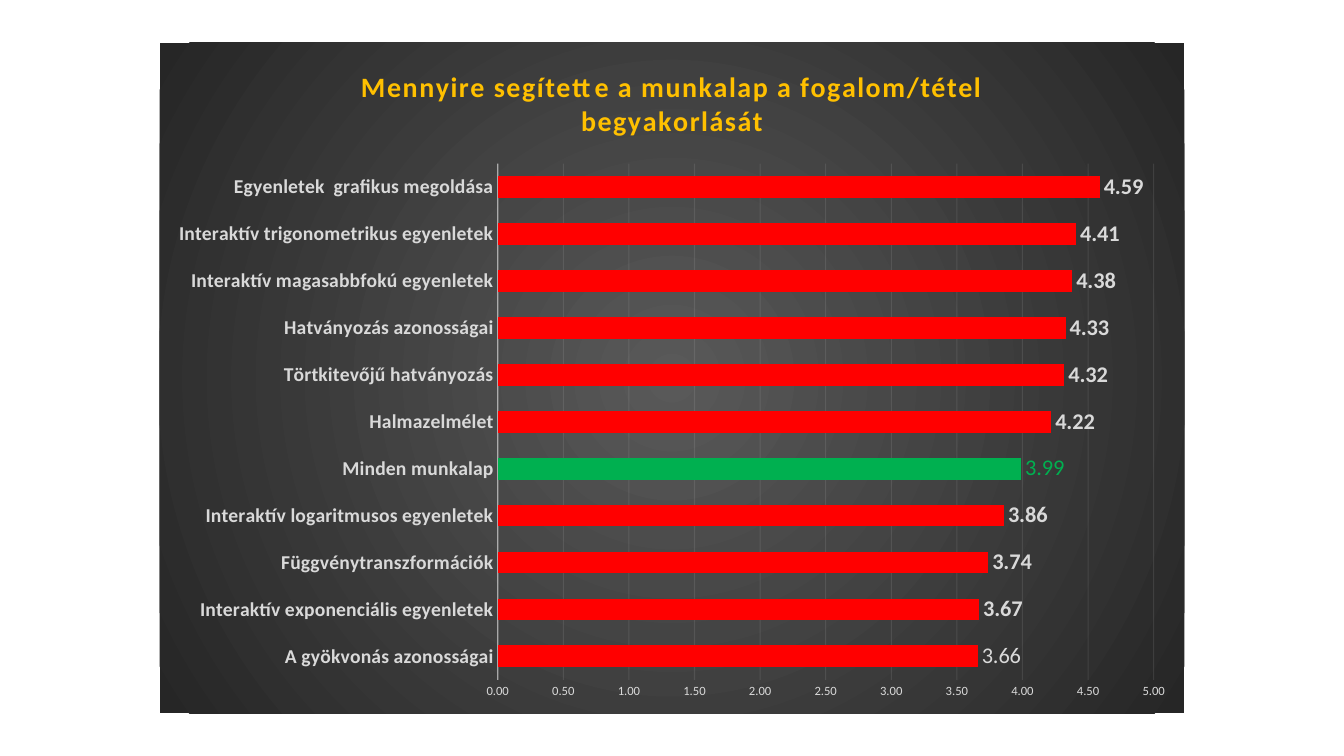
from lxml.etree import SubElement
from pptx import Presentation
from pptx.chart.data import CategoryChartData
from pptx.dml.color import RGBColor
from pptx.enum.chart import XL_CHART_TYPE, XL_LABEL_POSITION, XL_TICK_MARK
from pptx.oxml import parse_xml
from pptx.oxml.ns import nsdecls, qn
from pptx.util import Cm, Pt

COLORS = {
    "title": "FFC000",
    "text": "D9D9D9",
    "line": "F2F2F2",
    "bar": "FF0000",
    "average": "00B050",
    "center": "595959",
    "edge": "262626",
}
FONT = "Calibri"
TITLE = "Mennyire segítette a munkalap a fogalom/tétel begyakorlását"
RATINGS = {
    "A gyökvonás azonosságai": 3.66,
    "Interaktív exponenciális egyenletek": 3.67,
    "Függvénytranszformációk": 3.74,
    "Interaktív logaritmusos egyenletek": 3.86,
    "Minden munkalap": 3.99,
    "Halmazelmélet": 4.22,
    "Törtkitevőjű hatványozás": 4.32,
    "Hatványozás azonosságai": 4.33,
    "Interaktív magasabbfokú egyenletek": 4.38,
    "Interaktív trigonometrikus egyenletek": 4.41,
    "Egyenletek  grafikus megoldása": 4.59,
}
AVERAGE = list(RATINGS).index("Minden munkalap")
PLOT_LAYOUT = {"x": 0.33, "y": 0.18, "w": 0.64, "h": 0.77}


def rgb(name):
    return RGBColor.from_string(COLORS[name])


def set_font(font, size, color="text", bold=False):
    font.name = FONT
    font.size = Pt(size)
    font.bold = bold
    font.color.rgb = rgb(color)


def set_line(line, width, holder, opacity):
    """Style a line; holder is the chart element that owns it."""
    line.width = Pt(width)
    line.color.rgb = rgb("line")
    color = holder.find(qn("c:spPr")).find(".//" + qn("a:srgbClr"))
    SubElement(color, qn("a:alpha"), val=str(opacity * 1000))


def fill_background(chart):
    stops = "".join(
        f'<a:gs pos="{position}"><a:srgbClr val="{COLORS[name]}"/></a:gs>'
        for position, name in ((0, "center"), (100000, "edge"))
    )
    chart.element.find(qn("c:chart")).addnext(parse_xml(
        f'<c:spPr {nsdecls("c", "a")}><a:gradFill><a:gsLst>{stops}</a:gsLst>'
        '<a:path path="circle"><a:fillToRect l="50000" t="50000" r="50000" b="50000"/>'
        "</a:path></a:gradFill><a:ln><a:noFill/></a:ln></c:spPr>"
    ))


def place_plot(chart):
    plot_area = chart.element.find(".//" + qn("c:plotArea"))
    for layout in plot_area.findall(qn("c:layout")):
        plot_area.remove(layout)
    modes = '<c:xMode val="edge"/><c:yMode val="edge"/>'
    sizes = "".join(f'<c:{key} val="{value}"/>' for key, value in PLOT_LAYOUT.items())
    plot_area.insert(0, parse_xml(
        f'<c:layout {nsdecls("c")}><c:manualLayout><c:layoutTarget val="inner"/>'
        f"{modes}{sizes}</c:manualLayout></c:layout>"
    ))


def style_title(chart):
    chart.has_title = True
    chart.chart_title.include_in_layout = False
    paragraph = chart.chart_title.text_frame.paragraphs[0]
    paragraph.text = TITLE
    set_font(paragraph.font, 20, "title", True)
    for properties in chart.element.find(".//" + qn("c:title")).iter(qn("a:defRPr")):
        properties.set("spc", "100")


def style_axes(chart):
    topics, scale = chart.category_axis, chart.value_axis
    for axis in (topics, scale):
        axis.major_tick_mark = axis.minor_tick_mark = XL_TICK_MARK.NONE
    set_font(topics.tick_labels.font, 14, bold=True)
    set_line(topics.format.line, 1, chart.element.find(".//" + qn("c:catAx")), 54)
    set_font(scale.tick_labels.font, 9)
    scale.tick_labels.number_format = "0.00"
    scale.tick_labels.number_format_is_linked = False
    scale.minimum_scale, scale.maximum_scale, scale.major_unit = 0, 5, 0.5
    scale.format.line.fill.background()
    scale.has_major_gridlines = True
    gridlines = scale.major_gridlines.format.line
    set_line(gridlines, 0.75, chart.element.find(".//" + qn("c:majorGridlines")), 10)


def style_bars(plot):
    plot.gap_width = 115
    plot.overlap = -20
    plot.vary_by_categories = False
    series = plot.series[0]
    series.format.fill.solid()
    series.format.fill.fore_color.rgb = rgb("bar")
    average_fill = series.points[AVERAGE].format.fill
    average_fill.solid()
    average_fill.fore_color.rgb = rgb("average")

    labels = series.data_labels
    labels.show_value = True
    labels.number_format = "0.00"
    labels.number_format_is_linked = False
    labels.position = XL_LABEL_POSITION.OUTSIDE_END
    set_font(labels.font, 16, bold=True)
    for index, color in ((0, "text"), (AVERAGE, "average")):
        label = series.points[index].data_label
        set_font(label.font, 16, color)
        label.position = XL_LABEL_POSITION.OUTSIDE_END


def add_rating_chart(slide, left, top, width, height):
    data = CategoryChartData(number_format="0.00")
    data.categories = list(RATINGS)
    data.add_series("Értékelés", list(RATINGS.values()))
    chart = slide.shapes.add_chart(
        XL_CHART_TYPE.BAR_CLUSTERED, left, top, width, height, data
    ).chart
    chart.has_legend = False
    set_font(chart.font, 10)
    style_title(chart)
    style_axes(chart)
    style_bars(chart.plots[0])
    place_plot(chart)
    fill_background(chart)


def main():
    presentation = Presentation()
    presentation.slide_width, presentation.slide_height = Cm(33.87), Cm(19.05)
    slide = presentation.slides.add_slide(presentation.slide_layouts[6])
    add_rating_chart(slide, Cm(4.02), Cm(1.08), Cm(25.83), Cm(16.9))
    presentation.save("out.pptx")


if __name__ == "__main__":
    main()
